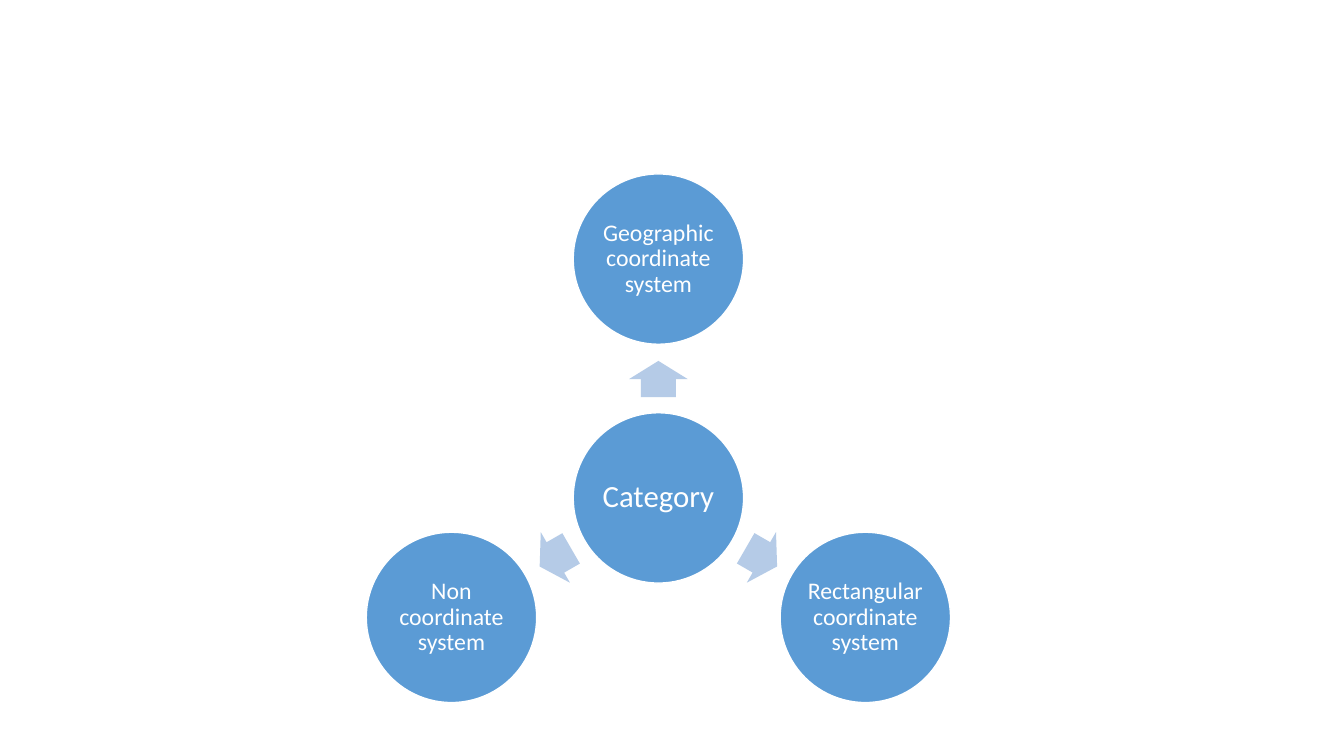
"""Build a radial diagram of coordinate system categories."""
from math import cos, sin, radians
from pptx import Presentation
from pptx.dml.color import RGBColor as RGB
from pptx.enum.shapes import MSO_SHAPE as SHAPE
from pptx.enum.text import MSO_ANCHOR as ANCHOR, PP_ALIGN as ALIGN
from pptx.util import Pt

PX = 9144
COLORS = {"disc": "5B9BD5", "arrow": "B5CBE7", "white": "FFFFFF"}
MID_X, MID_Y = 653, 494
DISC = 169
ARROW_W, ARROW_H = 36, 58
DISC_GAP, ARROW_GAP = 237, 118

deck = Presentation()
deck.slide_width, deck.slide_height = 1333 * PX, 750 * PX
slide = deck.slides.add_slide(deck.slide_layouts[6])


def add_part(kind, angle, gap, wide, high, color):
    x = MID_X + gap * cos(radians(angle)) - wide / 2
    y = MID_Y + gap * sin(radians(angle)) - high / 2
    part = slide.shapes.add_shape(
        kind, round(x * PX), round(y * PX), wide * PX, high * PX)
    part.shadow.inherit = False
    part.fill.solid()
    part.fill.fore_color.rgb = RGB.from_string(COLORS[color])
    return part


def add_disc(label, angle, gap, size, inset):
    disc = add_part(SHAPE.OVAL, angle, gap, DISC, DISC, "disc")
    disc.line.color.rgb = RGB.from_string(COLORS["white"])
    disc.line.width = Pt(1)
    frame = disc.text_frame
    frame.word_wrap = True
    frame.vertical_anchor = ANCHOR.MIDDLE
    frame.margin_left = frame.margin_right = inset * PX
    frame.margin_top = frame.margin_bottom = inset * PX
    para = frame.paragraphs[0]
    para.alignment = ALIGN.CENTER
    para.line_spacing = 0.9
    run = para.add_run()
    run.text = label
    run.font.name = "Calibri"
    run.font.size = Pt(size)
    run.font.color.rgb = RGB.from_string(COLORS["white"])


add_disc("Category", 0, 0, 22, 3)

labels = ["Geographic coordinate system",
          "Rectangular coordinate system",
          "Non coordinate system"]
for i, label in enumerate(labels):
    angle = 270 + i * 120
    arrow = add_part(SHAPE.RIGHT_ARROW, angle, ARROW_GAP, ARROW_W, ARROW_H, "arrow")
    arrow.line.fill.background()
    arrow.adjustments[0] = 0.6
    arrow.adjustments[1] = 0.5
    arrow.rotation = angle % 360
    add_disc(label, angle, DISC_GAP, 17, 2)

deck.save("out.pptx")
